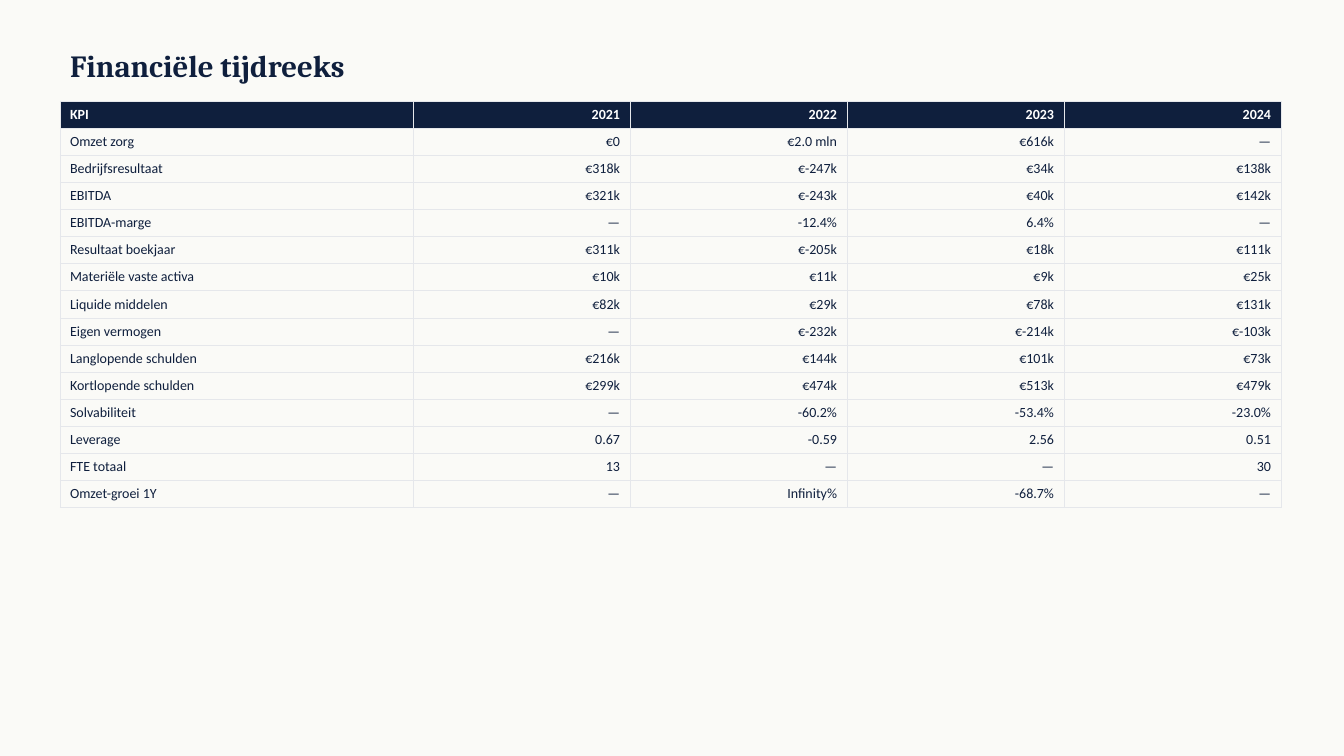
import pptx
import pptx.util
import pptx.dml.color
import pptx.enum.text
import pptx.oxml
import pptx.oxml.ns

PX = 914400 / 100.8
COLORS = {"navy": "0F1F3D", "paper": "FAFAF7", "white": "FFFFFF", "rule": "E5E7EB"}
ALIGN = pptx.enum.text.PP_ALIGN
ANCHOR = pptx.enum.text.MSO_ANCHOR
KPI_ROWS = [
    ("KPI", "2021", "2022", "2023", "2024"),
    ("Omzet zorg", "€0", "€2.0 mln", "€616k", "—"),
    ("Bedrijfsresultaat", "€318k", "€-247k", "€34k", "€138k"),
    ("EBITDA", "€321k", "€-243k", "€40k", "€142k"),
    ("EBITDA-marge", "—", "-12.4%", "6.4%", "—"),
    ("Resultaat boekjaar", "€311k", "€-205k", "€18k", "€111k"),
    ("Materiële vaste activa", "€10k", "€11k", "€9k", "€25k"),
    ("Liquide middelen", "€82k", "€29k", "€78k", "€131k"),
    ("Eigen vermogen", "—", "€-232k", "€-214k", "€-103k"),
    ("Langlopende schulden", "€216k", "€144k", "€101k", "€73k"),
    ("Kortlopende schulden", "€299k", "€474k", "€513k", "€479k"),
    ("Solvabiliteit", "—", "-60.2%", "-53.4%", "-23.0%"),
    ("Leverage", "0.67", "-0.59", "2.56", "0.51"),
    ("FTE totaal", "13", "—", "—", "30"),
    ("Omzet-groei 1Y", "—", "Infinity%", "-68.7%", "—"),
]
COLUMN_WIDTHS = [353] + [217] * 4
ROW_HEIGHT = 27


def px(length):
    return pptx.util.Emu(round(length * PX))


def style_text(paragraph, font_name, size, color, bold, align):
    paragraph.alignment = align
    for run in paragraph.runs:
        run.font.name = font_name
        run.font.size = pptx.util.Pt(size)
        run.font.bold = bold
        run.font.color.rgb = pptx.dml.color.RGBColor.from_string(COLORS[color])


deck = pptx.Presentation()
deck.slide_width, deck.slide_height = px(1344), px(756)
slide = deck.slides.add_slide(deck.slide_layouts[5])
slide.background.fill.solid()
slide.background.fill.fore_color.rgb = pptx.dml.color.RGBColor.from_string(COLORS["paper"])

heading = slide.shapes.title
heading.left, heading.top, heading.width, heading.height = px(60), px(40), px(1210), px(50)
heading.text_frame.text = "Financiële tijdreeks"
heading.text_frame.word_wrap = True
heading.text_frame.auto_size = pptx.enum.text.MSO_AUTO_SIZE.NONE
heading.text_frame.vertical_anchor = ANCHOR.MIDDLE
style_text(heading.text_frame.paragraphs[0], "Cambria", 22, "navy", True, ALIGN.LEFT)

kpi_table = slide.shapes.add_table(
    len(KPI_ROWS), len(COLUMN_WIDTHS), px(60), px(101),
    px(sum(COLUMN_WIDTHS)), px(ROW_HEIGHT * len(KPI_ROWS)),
).table
kpi_table.horz_banding = False
for column, width in zip(kpi_table.columns, COLUMN_WIDTHS):
    column.width = px(width)

for row_index, values in enumerate(KPI_ROWS):
    kpi_table.rows[row_index].height = px(ROW_HEIGHT)
    is_header = row_index == 0
    for column_index, value in enumerate(values):
        cell = kpi_table.cell(row_index, column_index)
        cell.text_frame.text = value
        style_text(
            cell.text_frame.paragraphs[0], "Calibri", 10,
            "white" if is_header else "navy", is_header,
            ALIGN.RIGHT if column_index else ALIGN.LEFT,
        )
        cell_properties = cell._tc.get_or_add_tcPr()
        for side in ("lnL", "lnR", "lnT", "lnB"):
            cell_properties.append(pptx.oxml.parse_xml(
                f'<a:{side} {pptx.oxml.ns.nsdecls("a")} w="{pptx.util.Pt(0.5)}"><a:solidFill>'
                f'<a:srgbClr val="{COLORS["rule"]}"/></a:solidFill></a:{side}>'
            ))
        cell.fill.solid()
        cell.fill.fore_color.rgb = pptx.dml.color.RGBColor.from_string(
            COLORS["navy" if is_header else "paper"])

deck.save("out.pptx")
